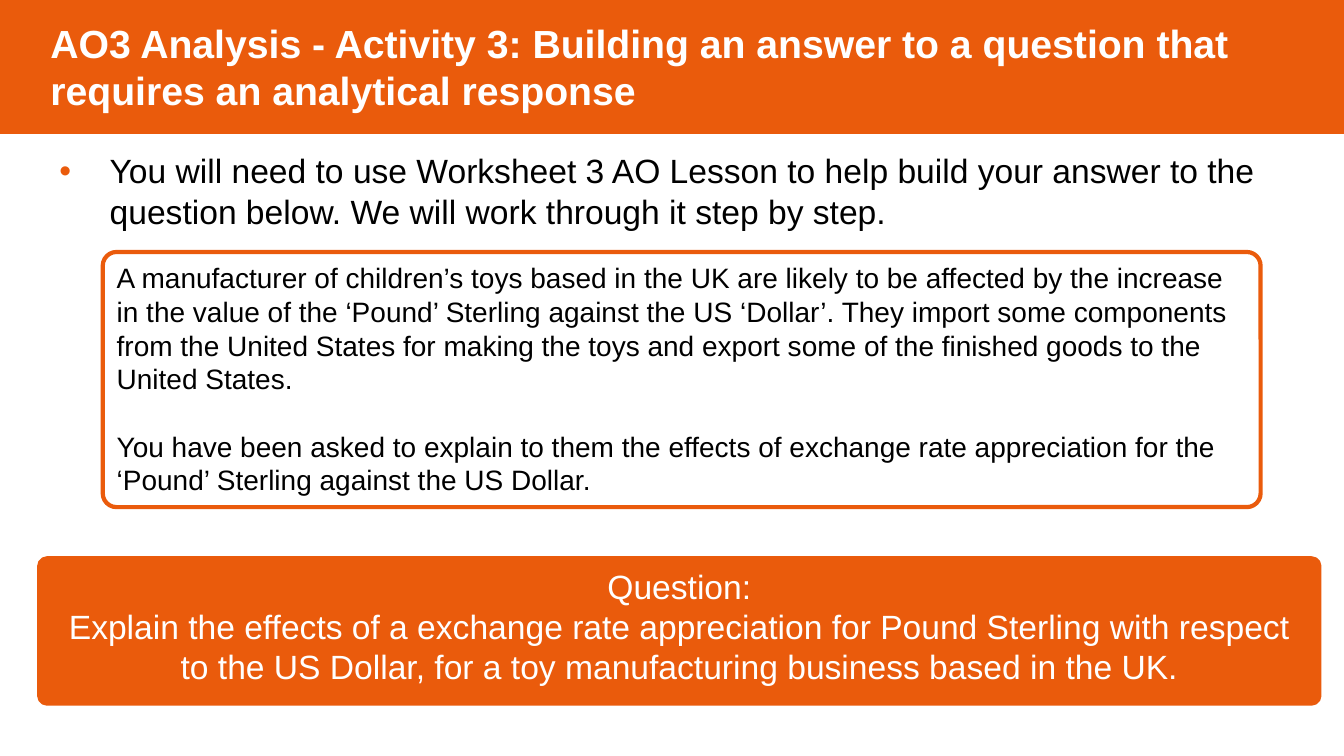
from lxml import etree
from pptx import Presentation
from pptx import util as u
from pptx.dml import color
from pptx.enum import shapes, text
from pptx.oxml import ns

COLOURS = {"orange": "EA5B0C", "white": "FFFFFF", "black": "000000"}
FONT = "Arial"
CORNER = 0.054

TITLE = ("AO3 Analysis - Activity 3: Building an answer to a question that "
         "requires an analytical response")
INSTRUCTION = ("You will need to use Worksheet 3 AO Lesson to help build your answer "
               "to the question below. We will work through it step by step.")
SCENARIO = [
    "A manufacturer of children’s toys based in the UK are likely to be affected by "
    "the increase in the value of the ‘Pound’ Sterling against the US ‘Dollar’. They "
    "import some components from the United States for making the toys and export "
    "some of the finished goods to the United States.",
    "You have been asked to explain to them the effects of exchange rate appreciation "
    "for the ‘Pound’ Sterling against the US Dollar.",
]
QUESTION = [
    "Question:",
    "Explain the effects of a exchange rate appreciation for Pound Sterling with "
    "respect to the US Dollar, for a toy manufacturing business based in the UK.",
]


def rgb(name):
    return color.RGBColor.from_string(COLOURS[name])


def set_attributes(target, values):
    for name, value in values.items():
        setattr(target, name, value)


def place(shape, left, top, width, height):
    set_attributes(shape, {"left": u.Cm(left), "top": u.Cm(top),
                           "width": u.Cm(width), "height": u.Cm(height)})


def paint(shape, fill, line_width):
    if fill:
        shape.fill.solid()
        shape.fill.fore_color.rgb = rgb(fill)
    else:
        shape.fill.background()
    shape.line.color.rgb = rgb("orange")
    shape.line.width = u.Pt(line_width)


def write(shape, lines, size, colour, align="LEFT", anchor="TOP", bold=False, gap=0):
    frame = shape.text_frame
    set_attributes(frame, {"word_wrap": True, "auto_size": text.MSO_AUTO_SIZE.NONE,
                           "vertical_anchor": getattr(text.MSO_ANCHOR, anchor)})
    frame.text = "\n".join(lines)
    for paragraph in frame.paragraphs:
        set_attributes(paragraph, {"alignment": getattr(text.PP_ALIGN, align),
                                   "space_before": u.Pt(0), "space_after": u.Pt(gap)})
        for run in paragraph.runs:
            set_attributes(run.font, {"name": FONT, "size": u.Pt(size), "bold": bold})
            run.font.color.rgb = rgb(colour)
    frame.paragraphs[-1].space_after = u.Pt(0)


def add_bullet(paragraph, indent):
    properties = paragraph._p.get_or_add_pPr()
    properties.set("marL", str(u.Cm(indent)))
    properties.set("indent", str(-u.Cm(indent)))
    bullet_colour = etree.SubElement(properties, ns.qn("a:buClr"))
    etree.SubElement(bullet_colour, ns.qn("a:srgbClr"), val=COLOURS["orange"])
    etree.SubElement(properties, ns.qn("a:buFont"), typeface=FONT)
    etree.SubElement(properties, ns.qn("a:buChar"), char="•")


def add_panel(slide, box, lines, fill=None, **style):
    panel = slide.shapes.add_shape(shapes.MSO_SHAPE.ROUNDED_RECTANGLE,
                                   *(u.Cm(length) for length in box))
    panel.adjustments[0] = CORNER
    panel.shadow.inherit = False
    paint(panel, fill, 3)
    write(panel, lines, **style)


def add_title_band(slide):
    title = slide.shapes.title
    place(title, 0, 0, 33.87, 3.35)
    paint(title, "orange", 1)
    write(title, [TITLE], 28, "white", anchor="MIDDLE", bold=True)
    title.text_frame.margin_left = u.Cm(1.27)


def add_instruction(slide):
    body = slide.placeholders[1]
    place(body, 1.24, 3.66, 32, 2.31)
    write(body, [INSTRUCTION], 24, "black")
    add_bullet(body.text_frame.paragraphs[0], 1.27)


def main():
    presentation = Presentation()
    set_attributes(presentation, {"slide_width": u.Cm(33.87), "slide_height": u.Cm(19.05)})
    slide = presentation.slides.add_slide(presentation.slide_layouts[1])
    add_title_band(slide)
    add_instruction(slide)
    add_panel(slide, (2.59, 6.35, 29.18, 6.43), SCENARIO,
              size=20, colour="black", gap=24)
    add_panel(slide, (0.99, 14.07, 32.26, 3.66), QUESTION, fill="orange",
              size=24, colour="white", align="CENTER", anchor="TOP")
    presentation.save("out.pptx")


if __name__ == "__main__":
    main()
